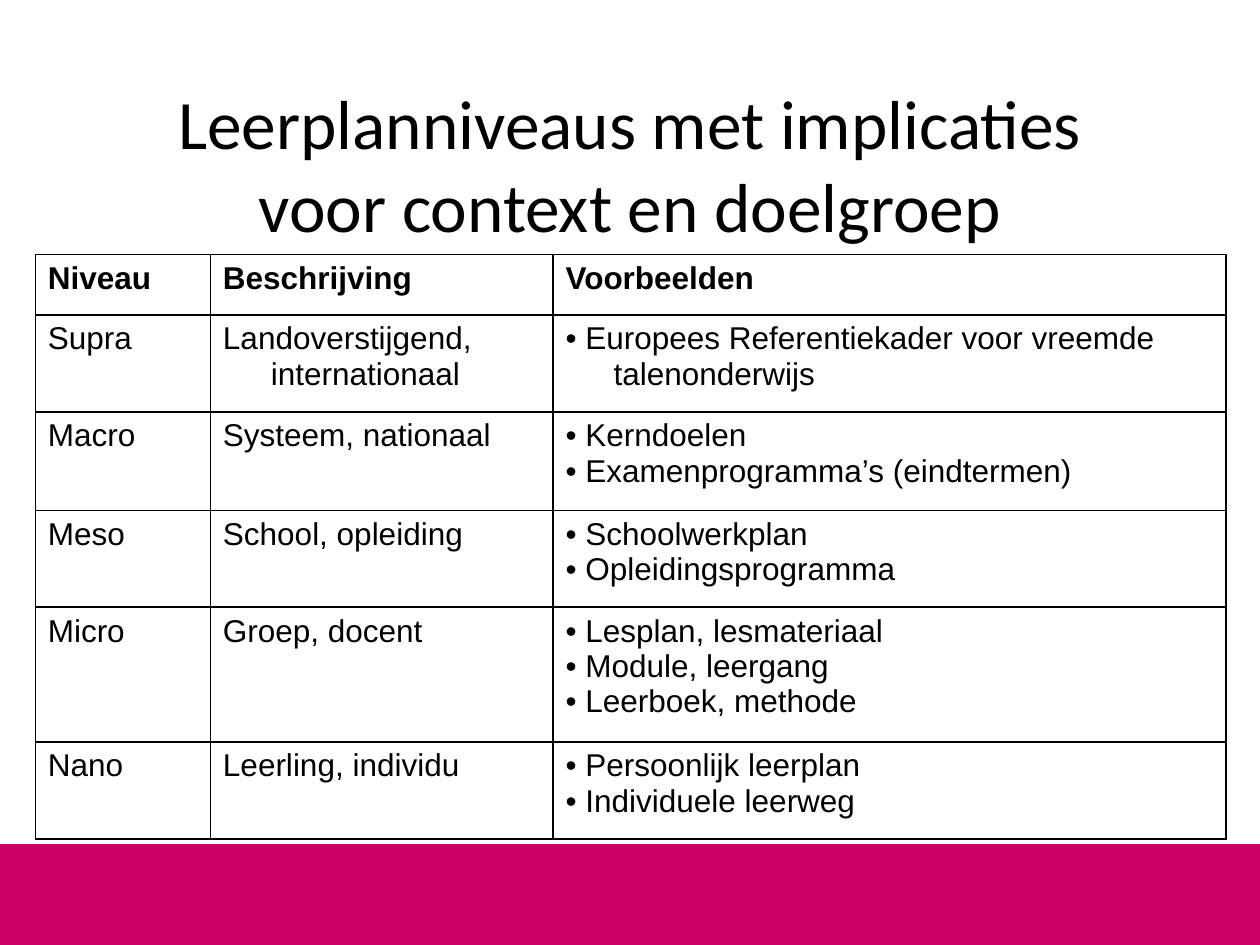
from pptx import Presentation
from pptx.dml.color import RGBColor
from pptx.enum.shapes import MSO_SHAPE
from pptx.enum.text import MSO_ANCHOR, PP_ALIGN
from pptx.oxml import parse_xml
from pptx.oxml.ns import nsdecls
from pptx.util import Inches, Pt

BLACK, WHITE, PINK = "000000", "FFFFFF", "CC0066"
HANG = 0.38

COLS = [1.39, 2.72, 5.34]
HEAD = ["Niveau", "Beschrijving", ["Voorbeelden"]]
LEVELS = [
    ("Supra", "Landoverstijgend, internationaal",
     ["Europees Referentiekader voor vreemde talenonderwijs"]),
    ("Macro", "Systeem, nationaal",
     ["Kerndoelen", "Examenprogramma’s (eindtermen)"]),
    ("Meso", "School, opleiding", ["Schoolwerkplan", "Opleidingsprogramma"]),
    ("Micro", "Groep, docent",
     ["Lesplan, lesmateriaal", "Module, leergang", "Leerboek, methode"]),
    ("Nano", "Leerling, individu",
     ["Persoonlijk leerplan", "Individuele leerweg"]),
]
HEIGHTS = [0.48, 0.77, 0.78, 0.77, 1.07, 0.77]


def color(code):
    return RGBColor.from_string(code)


def add_run(para, text, font, size, bold=False):
    run = para.add_run()
    run.text = text
    run.font.name = font
    run.font.size = Pt(size)
    run.font.bold = bold
    run.font.color.rgb = color(BLACK)


def add_band(slide, box):
    band = slide.shapes.add_shape(MSO_SHAPE.RECTANGLE, *map(Inches, box))
    band.shadow.inherit = False
    band.fill.solid()
    band.fill.fore_color.rgb = color(PINK)
    band.line.fill.background()


def add_title(slide, box, text):
    frame = slide.shapes.add_textbox(*map(Inches, box)).text_frame
    frame.word_wrap = True
    frame.vertical_anchor = MSO_ANCHOR.MIDDLE
    para = frame.paragraphs[0]
    para.alignment = PP_ALIGN.CENTER
    add_run(para, text, "Calibri", 39.6)


def add_borders(cell):
    props = cell._tc.get_or_add_tcPr()
    for i, side in enumerate(("lnL", "lnR", "lnT", "lnB")):
        props.insert(i, parse_xml(
            f'<a:{side} {nsdecls("a")} w="{Pt(1)}"><a:solidFill>'
            f'<a:srgbClr val="{BLACK}"/></a:solidFill></a:{side}>'))


def fill_cell(cell, lines, bold):
    """Write one hanging paragraph per line."""
    cell.fill.solid()
    cell.fill.fore_color.rgb = color(WHITE)
    add_borders(cell)
    frame = cell.text_frame
    for i, line in enumerate(lines):
        para = frame.add_paragraph() if i else frame.paragraphs[0]
        props = para._p.get_or_add_pPr()
        props.set("marL", str(Inches(HANG)))
        props.set("indent", str(-Inches(HANG)))
        add_run(para, line, "Arial", 18, bold)


def add_levels(slide, left, top):
    rows = [HEAD] + LEVELS
    table = slide.shapes.add_table(
        len(rows), len(COLS), Inches(left), Inches(top),
        Inches(sum(COLS)), Inches(sum(HEIGHTS))).table
    for col, width in zip(table.columns, COLS):
        col.width = Inches(width)
    for r, (level, scope, items) in enumerate(rows):
        table.rows[r].height = Inches(HEIGHTS[r])
        # The mark is typed: wrapped lines hang deeper than the first word.
        lines = [f"• {item}" for item in items] if r else items
        for c, texts in enumerate(([level], [scope], lines)):
            fill_cell(table.cell(r, c), texts, bold=r == 0)


def main():
    deck = Presentation()
    deck.slide_width, deck.slide_height = Inches(10), Inches(7.5)
    slide = deck.slides.add_slide(deck.slide_layouts[6])
    add_band(slide, (0, 6.7, 10, 0.8))
    add_title(slide, (1, 0.67, 8, 1.25),
              "Leerplanniveaus met implicaties voor context en doelgroep")
    add_levels(slide, 0.28, 2.02)
    deck.save("out.pptx")


if __name__ == "__main__":
    main()
